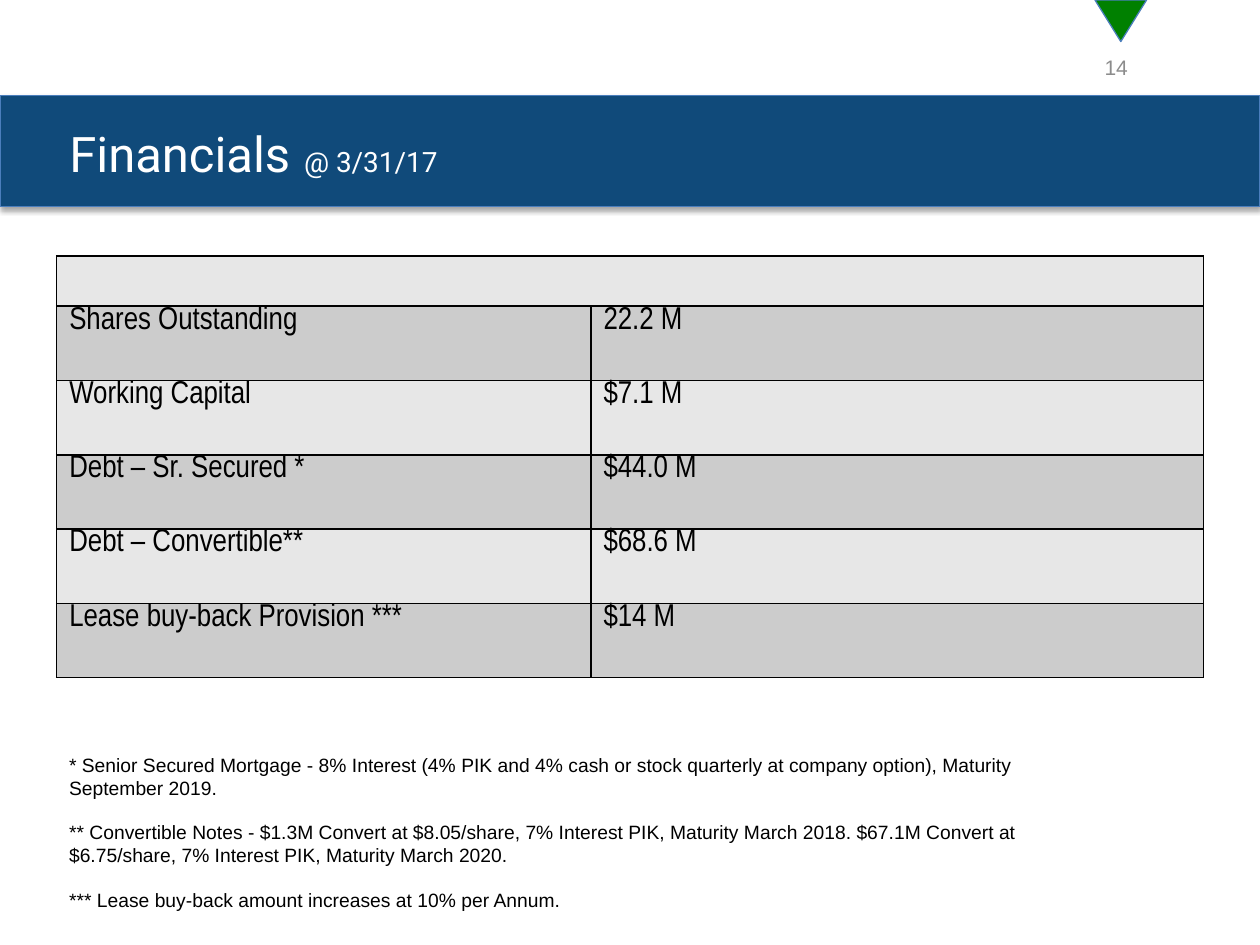
from dataclasses import dataclass

import lxml.etree
import pptx
import pptx.dml.color
import pptx.enum.shapes
import pptx.enum.text
import pptx.oxml
import pptx.oxml.ns
import pptx.util

Inches = pptx.util.Inches
Pt = pptx.util.Pt
Shapes = pptx.enum.shapes.MSO_SHAPE
Align = pptx.enum.text.PP_ALIGN
MIDDLE = pptx.enum.text.MSO_ANCHOR.MIDDLE
qn = pptx.oxml.ns.qn

COLORS = {
    "band": "104A7A", "outline": "4B7EBC", "marker": "008000",
    "number": "8C8C8C", "white": "FFFFFF", "black": "000000",
    "light": "E7E7E7", "dark": "CCCCCC",
}


@dataclass(frozen=True)
class Box:
    left: float
    top: float
    width: float
    height: float

    def lengths(self) -> tuple:
        return tuple(Inches(v) for v in (self.left, self.top, self.width, self.height))


@dataclass(frozen=True)
class Style:
    font: str
    size: float
    color: str


@dataclass(frozen=True)
class Figure:
    label: str
    value: str


FIGURES = [
    Figure("Shares Outstanding", "22.2 M"),
    Figure("Working Capital", "$7.1 M"),
    Figure("Debt – Sr. Secured *", "$44.0 M"),
    Figure("Debt – Convertible**", "$68.6 M"),
    Figure("Lease buy-back Provision ***", "$14 M"),
]
FOOTNOTES = [
    "* Senior Secured Mortgage - 8% Interest (4% PIK and 4% cash or stock quarterly "
    "at company option), Maturity September 2019.",
    "** Convertible Notes - $1.3M Convert at $8.05/share, 7% Interest PIK, Maturity "
    "March 2018. $67.1M Convert at $6.75/share, 7% Interest PIK, Maturity March 2020.",
    "*** Lease buy-back amount increases at 10% per Annum.",
]
TITLE_SPANS = [("Financials", 28), (" ", 32), ("@ 3/31/17", 16)]
COLUMN_WIDTHS = [4.24, 4.86]
HEADER_HEIGHT, ROW_HEIGHT = 0.4, 0.59


def rgb(name: str) -> pptx.dml.color.RGBColor:
    return pptx.dml.color.RGBColor.from_string(COLORS[name])


def format_font(font, style: Style) -> None:
    font.name = style.font
    font.size = Pt(style.size)
    font.color.rgb = rgb(style.color)


def add_filled_shape(page, kind, box: Box, fill: str):
    shape = page.shapes.add_shape(kind, *box.lengths())
    shape.shadow.inherit = False
    shape.fill.solid()
    shape.fill.fore_color.rgb = rgb(fill)
    shape.line.color.rgb = rgb("outline")
    shape.line.width = Pt(0.75)
    return shape


def add_drop_shadow(shape) -> None:
    effects = shape._element.spPr.find(qn("a:effectLst"))
    shadow = lxml.etree.SubElement(
        effects, qn("a:outerShdw"), blurRad=str(Pt(3.1)), dist=str(Pt(1.8)),
        dir="5400000", rotWithShape="0")
    color = lxml.etree.SubElement(shadow, qn("a:srgbClr"), val=COLORS["black"])
    lxml.etree.SubElement(color, qn("a:alpha"), val="35000")


def add_text(page, box: Box, lines: list[str], style: Style, space_after: float = 0):
    frame = page.shapes.add_textbox(*box.lengths()).text_frame
    frame.word_wrap = True
    frame.text = "\n".join(lines)
    for para in frame.paragraphs:
        para.space_after = Pt(space_after)
        for span in para.runs:
            format_font(span.font, style)
    return frame


def write_title(page, box: Box) -> None:
    title = page.shapes.title
    title.left, title.top, title.width, title.height = box.lengths()
    frame = title.text_frame
    frame.word_wrap = True
    frame.vertical_anchor = MIDDLE
    para = frame.paragraphs[0]
    para.alignment = Align.LEFT
    for text, size in TITLE_SPANS:
        span = para.add_run()
        span.text = text
        format_font(span.font, Style("Roboto", size, "white"))
    # Bring the title in front of the band
    page.shapes._spTree.append(title._element)


def format_cell(cell, fill: str) -> None:
    properties = cell._tc.get_or_add_tcPr()
    for side in ("lnL", "lnR", "lnT", "lnB"):
        line = lxml.etree.SubElement(properties, qn(f"a:{side}"), w=str(Pt(1)))
        solid = lxml.etree.SubElement(line, qn("a:solidFill"))
        lxml.etree.SubElement(solid, qn("a:srgbClr"), val=COLORS["black"])
    cell.fill.solid()
    cell.fill.fore_color.rgb = rgb(fill)
    cell.margin_top = cell.margin_bottom = 0


def add_figures_table(page, box: Box) -> None:
    table = page.shapes.add_table(
        len(FIGURES) + 1, len(COLUMN_WIDTHS), *box.lengths()).table
    for column, width in zip(table.columns, COLUMN_WIDTHS):
        column.width = Inches(width)
    for index, row in enumerate(table.rows):
        row.height = Inches(ROW_HEIGHT if index else HEADER_HEIGHT)
        for cell in row.cells:
            format_cell(cell, "dark" if index % 2 else "light")
    table.cell(0, 0).merge(table.cell(0, 1))
    style = Style("Arial Narrow", 18, "black")
    for index, figure in enumerate(FIGURES, start=1):
        for column, text in enumerate((figure.label, figure.value)):
            para = table.cell(index, column).text_frame.paragraphs[0]
            para.text = text
            format_font(para.runs[0].font, style)


def main() -> None:
    deck = pptx.Presentation()
    deck.slide_width, deck.slide_height = Inches(10), Inches(7.5)
    page = deck.slides.add_slide(deck.slide_layouts[5])

    marker = add_filled_shape(
        page, Shapes.ISOSCELES_TRIANGLE, Box(8.69, 0, 0.41, 0.33), "marker")
    marker.rotation = 180
    number = add_text(page, Box(8.34, 0.33, 0.71, 0.4), ["14"],
                      Style("Arial", 12, "number"))
    number.vertical_anchor = MIDDLE
    number.paragraphs[0].alignment = Align.RIGHT

    band = add_filled_shape(page, Shapes.RECTANGLE, Box(0, 0.76, 10, 0.88), "band")
    add_drop_shadow(band)
    write_title(page, Box(0.45, 0.9, 8.8, 0.58))

    table_height = HEADER_HEIGHT + ROW_HEIGHT * len(FIGURES)
    add_figures_table(page, Box(0.45, 2.03, sum(COLUMN_WIDTHS), table_height))
    add_text(page, Box(0.45, 5.93, 8.06, 1.36), FOOTNOTES,
             Style("Arial", 11, "black"), space_after=12)
    deck.save("out.pptx")


if __name__ == "__main__":
    main()
